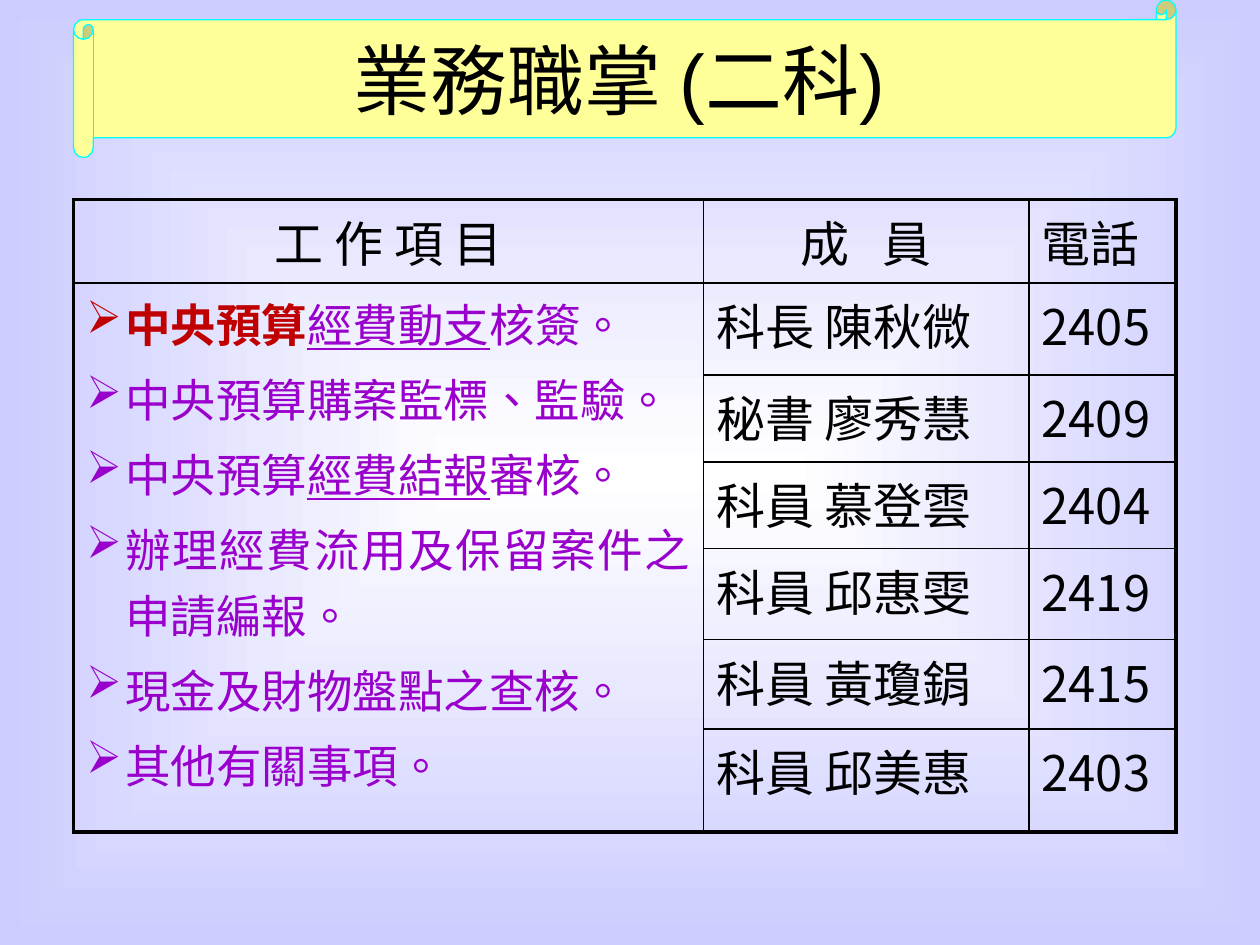
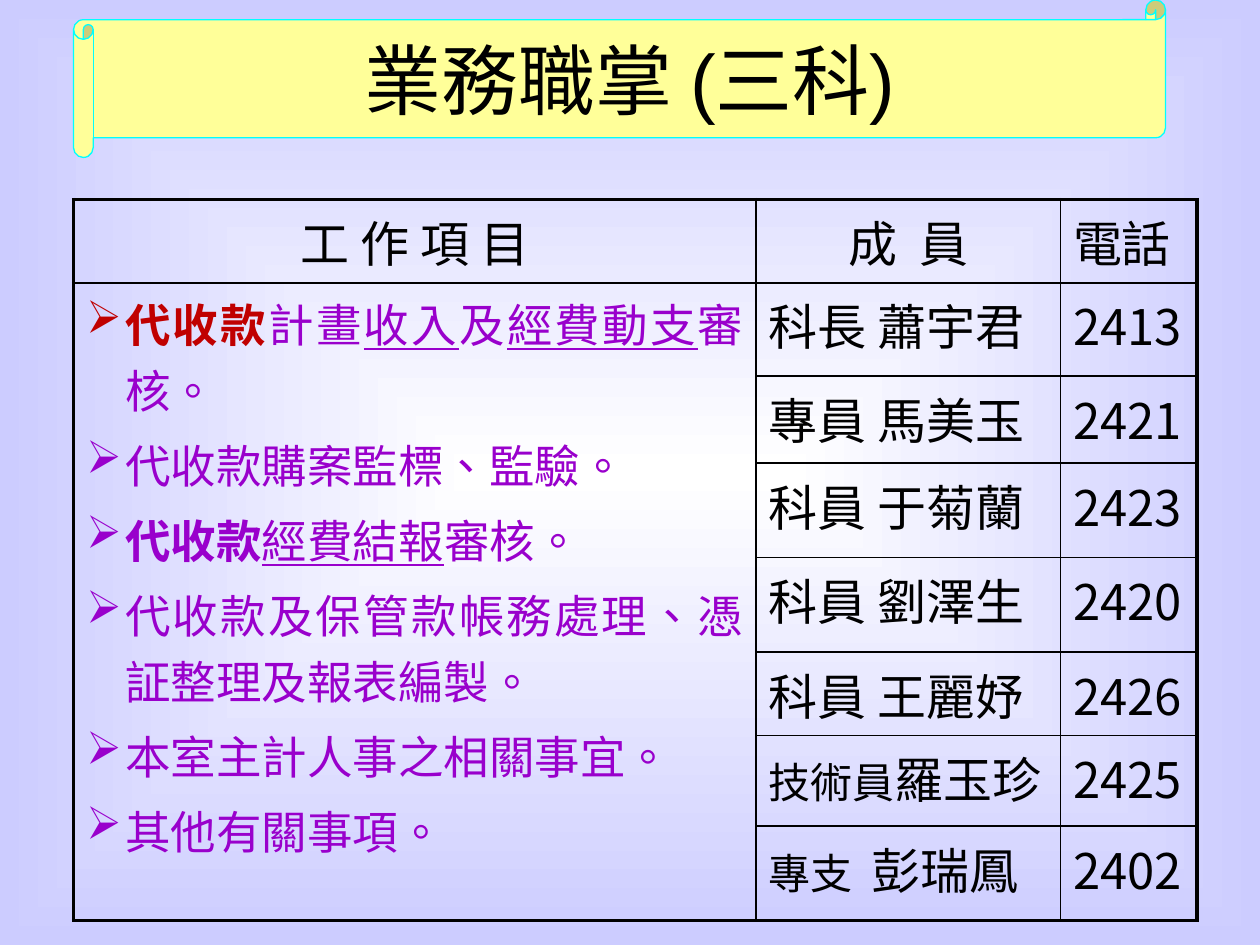
from typing import NamedTuple

import lxml.etree
import pptx
import pptx.dml.color
import pptx.enum.shapes
import pptx.enum.text
import pptx.oxml.ns
import pptx.util

COLORS = {
    "ink": "000000",
    "task": "9900CC",
    "key": "C00000",
    "scroll": "FFFF99",
    "edge": "00FFFF",
    "core": "FFFFFF",
    "rim": "CCCCFF",
}
SANS, SERIF, HEAD = "Noto Sans CJK SC", "Times New Roman", "Arial"
THIN, THICK = 1, 2.25
WIDE, HIGH = pptx.util.Inches(10), pptx.util.Inches(7.5)
UNIT = WIDE / 120  # the slide is a grid of 120 columns by 90 rows
LEFT, TOP, BAND = 7, 19, 15
ALIGN = pptx.enum.text.PP_ALIGN


class Run(NamedTuple):
    text: str
    bold: bool = False
    under: bool = False
    color: str = "task"
    size: float = 26
    face: str = SERIF
    gap: float = 0


class Staff(NamedTuple):
    name: list[Run]
    phone: str


class Page(NamedTuple):
    title: str
    shift: int
    scroll: int
    cols: list[int]
    rows: list[float]
    space: float
    tasks: list[list[Run]]
    staff: list[Staff]


def grid(count: float) -> int:
    return round(count * UNIT)


def tint(name: str) -> pptx.dml.color.RGBColor:
    return pptx.dml.color.RGBColor.from_string(COLORS[name])


def node(parent, tag: str, **attrs: str):
    """Append a DrawingML child with the given attributes."""
    return lxml.etree.SubElement(parent, pptx.oxml.ns.qn(f"a:{tag}"), **attrs)


def plain(text: str, size: float = 28, gap: float = 0) -> Run:
    return Run(text, color="ink", size=size, face=SANS, gap=gap)


def under(text: str) -> Run:
    return Run(text, under=True)


def write(para, text: str, *, bold: bool = False, under: bool = False,
          color: str = "ink", size: float = 28, face: str = SANS,
          gap: float = 0) -> None:
    """Add one run; gap widens the spacing after each letter, in points."""
    run = para.add_run()
    run.text = text
    font = run.font
    font.bold, font.underline = bold, under
    font.size, font.name = pptx.util.Pt(size), face
    font.color.rgb = tint(color)
    props = run._r.get_or_add_rPr()
    props.set("lang", "zh-TW")
    if gap:
        props.set("spc", str(round(gap * 100)))
    node(props, "ea", typeface=SANS)


def fill_line(para, runs: list[Run], align=ALIGN.LEFT) -> None:
    para.alignment = align
    for run in runs:
        write(para, **run._asdict())


def frame(cell, sides: dict[str, float]) -> None:
    """Set the four borders of a cell and clear its fill."""
    props = cell._tc.get_or_add_tcPr()
    for side, width in sides.items():
        line = node(props, f"ln{side}", w=str(pptx.util.Pt(width)))
        node(node(line, "solidFill"), "srgbClr", val=COLORS["ink"])
    cell.fill.background()


def paint_back(master) -> None:
    """Give the master a gradient that spreads from the centre."""
    fill = master.background.fill
    fill.gradient()
    for stop, name in zip(fill.gradient_stops, ("core", "rim")):
        stop.color.rgb = tint(name)
    grad = master._element.find(".//" + pptx.oxml.ns.qn("a:gradFill"))
    grad.remove(grad.find(pptx.oxml.ns.qn("a:lin")))
    path = node(grad, "path", path="shape")
    node(path, "fillToRect", l="50000", t="50000", r="50000", b="50000")


def draw_head(slide, page: Page) -> None:
    scroll = slide.shapes.add_shape(
        pptx.enum.shapes.MSO_SHAPE.HORIZONTAL_SCROLL,
        grid(LEFT), 0, grid(page.scroll), grid(BAND))
    scroll.shadow.inherit = False
    scroll.fill.solid()
    scroll.fill.fore_color.rgb = tint("scroll")
    scroll.line.color.rgb = tint("edge")
    scroll.line.width = pptx.util.Pt(0.75)
    slide.shapes._spTree.insert(2, scroll._element)

    title = slide.shapes.title
    title.left, title.top = grid(page.shift), 0
    title.width, title.height = grid(102), grid(BAND)
    text = title.text_frame
    text.auto_size = pptx.enum.text.MSO_AUTO_SIZE.NONE
    text.word_wrap = True
    text.vertical_anchor = pptx.enum.text.MSO_ANCHOR.MIDDLE
    para = text.paragraphs[0]
    para.alignment = ALIGN.CENTER
    write(para, page.title, size=44, face=HEAD)


def list_tasks(cell, tasks: list[list[Run]]) -> None:
    text = cell.text_frame
    dent = pptx.util.Inches(0.31)
    for index, runs in enumerate(tasks):
        para = text.add_paragraph() if index else text.paragraphs[0]
        props = para._p.get_or_add_pPr()
        props.set("marL", str(dent))
        props.set("indent", str(-dent))
        node(props, "buChar", char="➢")
        if index:
            para.space_before = pptx.util.Pt(5.2)
        fill_line(para, runs, ALIGN.JUSTIFY)


def draw_table(slide, page: Page) -> None:
    last = len(page.rows) - 1
    table = slide.shapes.add_table(
        len(page.rows), len(page.cols), grid(LEFT), grid(TOP),
        grid(sum(page.cols)), grid(sum(page.rows))).table
    table.first_row = table.horz_banding = False
    for col, width in zip(table.columns, page.cols):
        col.width = grid(width)
    for row, height in zip(table.rows, page.rows):
        row.height = grid(height)

    for row in range(last + 1):
        for col in range(3):
            heavy = {
                "L": col == 0,
                "R": col == 2,
                "T": row == 0,
                "B": row == last or (col == 0 and row > 0),
            }
            frame(table.cell(row, col),
                  {side: THICK if on else THIN for side, on in heavy.items()})
    table.cell(1, 0).merge(table.cell(last, 0))

    heads = [
        ([plain("工 作 項 目")], ALIGN.CENTER),
        ([plain("成"), plain(" ", gap=page.space), plain("員")], ALIGN.CENTER),
        ([plain("電話")], ALIGN.LEFT),
    ]
    for col, (runs, align) in enumerate(heads):
        fill_line(table.cell(0, col).text_frame.paragraphs[0], runs, align)
    list_tasks(table.cell(1, 0), page.tasks)
    for row, staff in enumerate(page.staff, 1):
        for col, runs in enumerate((staff.name, [plain(staff.phone)]), 1):
            fill_line(table.cell(row, col).text_frame.paragraphs[0], runs)


PAGES = [
    Page(
        "業務職掌 (二科)", shift=8, scroll=105, cols=[60, 31, 14],
        rows=[7.92, 8.76, 8.28, 8.28, 8.64, 8.52, 9.84], space=12.5,
        tasks=[
            [Run("中央預算", bold=True, color="key"), under("經費動支"),
             Run("核簽。")],
            [Run("中央預算購案監標、監驗。")],
            [Run("中央預算"), under("經費結報"), Run("審核。")],
            [Run("辦理經費流用及保留案件之申請編報。")],
            [Run("現金及財物盤點之查核。")],
            [Run("其他有關事項。")],
        ],
        staff=[
            Staff([plain("科長 陳秋微")], "2405"),
            Staff([plain("秘書 廖秀慧")], "2409"),
            Staff([plain("科員 慕登雲")], "2404"),
            Staff([plain("科員 邱惠雯")], "2419"),
            Staff([plain("科員 黃瓊鋗")], "2415"),
            Staff([plain("科員 邱美惠")], "2403"),
        ],
    ),
    Page(
        "業務職掌 (三科)", shift=9, scroll=104, cols=[65, 29, 13],
        rows=[7.92, 8.88, 8.28, 9, 9, 7.92, 8.64, 9], space=6.25,
        tasks=[
            [Run("代收款", bold=True, color="key"), Run("計畫"),
             under("收入"), Run("及"), under("經費動支"), Run("審核。")],
            [Run("代收款購案監標、監驗。")],
            [Run("代收款", bold=True), under("經費結報"), Run("審核。")],
            [Run("代收款及保管款帳務處理、憑証整理及報表編製。")],
            [Run("本室主計人事之相關事宜。")],
            [Run("其他有關事項。")],
        ],
        staff=[
            Staff([plain("科長 蕭宇君")], "2413"),
            Staff([plain("專員 馬美玉")], "2421"),
            Staff([plain("科員 于菊蘭")], "2423"),
            Staff([plain("科員 劉澤生")], "2420"),
            Staff([plain("科員 王麗妤")], "2426"),
            Staff([plain("技術員", size=24), plain("羅玉珍")], "2425"),
            Staff([plain("專支", size=24), plain(" ", size=24, gap=5.4),
                   plain("彭瑞鳳")], "2402"),
        ],
    ),
]


def main() -> None:
    deck = pptx.Presentation()
    deck.slide_width, deck.slide_height = WIDE, HIGH
    paint_back(deck.slide_master)
    layout = deck.slide_layouts.get_by_name("Title Only")
    for page in PAGES:
        slide = deck.slides.add_slide(layout)
        draw_head(slide, page)
        draw_table(slide, page)
    deck.save("out.pptx")


if __name__ == "__main__":
    main()
